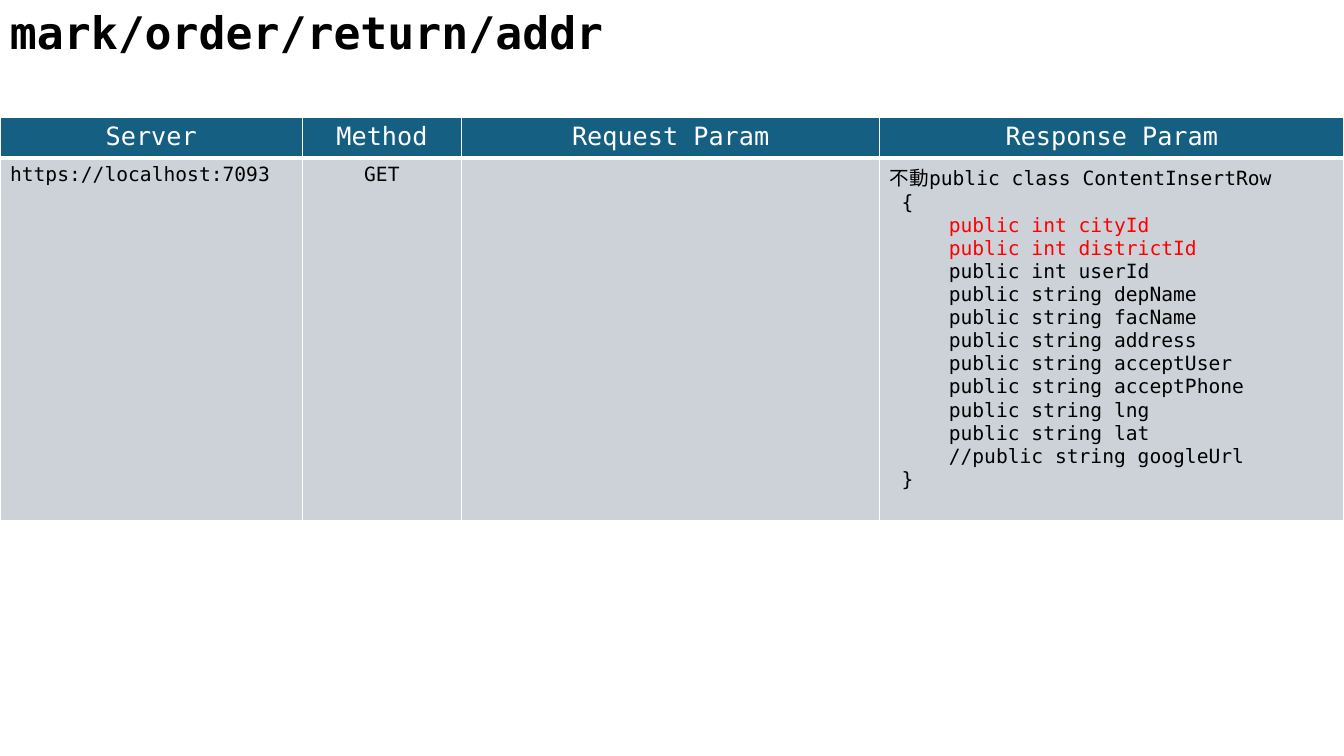
from dataclasses import dataclass

from lxml import etree
from pptx import Presentation
from pptx import util as u
from pptx.dml.color import RGBColor
from pptx.enum import text
from pptx.oxml.ns import qn


@dataclass(frozen=True)
class Theme:
    font: str = "DejaVu Sans Mono"
    ink: str = "000000"
    paper: str = "FFFFFF"
    header: str = "156082"
    body: str = "CCD2D8"
    changed: str = "FF0000"
    title_size: int = 32
    header_size: int = 18
    body_size: int = 14
    thin: int = 1
    thick: int = 3


THEME = Theme()
COLUMNS = {"Server": 7.62, "Method": 4.01, "Request Param": 10.54, "Response Param": 11.7}
CHANGED_FIELDS = ["int cityId", "int districtId"]
FIELDS = ["int userId", "string depName", "string facName", "string address",
          "string acceptUser", "string acceptPhone", "string lng", "string lat"]


def write(paragraph, words, *, size=THEME.body_size, color=THEME.ink, bold=False,
          align=text.PP_ALIGN.LEFT):
    paragraph.alignment = align
    run = paragraph.add_run()
    run.text = words
    run.font.name = THEME.font
    run.font.size = u.Pt(size)
    run.font.bold = bold
    run.font.color.rgb = RGBColor.from_string(color)


def style_cell(cell, fill, top, bottom):
    cell.fill.solid()
    cell.fill.fore_color.rgb = RGBColor.from_string(fill)
    # Cell borders come before the fill in the cell properties
    properties = cell._tc.get_or_add_tcPr()
    widths = {"a:lnL": THEME.thin, "a:lnR": THEME.thin, "a:lnT": top, "a:lnB": bottom}
    for index, (side, width) in enumerate(widths.items()):
        border = etree.Element(qn(side), w=str(u.Pt(width)))
        paint = etree.SubElement(border, qn("a:solidFill"))
        etree.SubElement(paint, qn("a:srgbClr"), val=THEME.paper)
        properties.insert(index, border)


def add_title(slide, left, top, width, height):
    frame = slide.shapes.add_textbox(left, top, width, height).text_frame
    frame.word_wrap = False
    write(frame.paragraphs[0], "mark/order/return/addr", size=THEME.title_size, bold=True)


def write_response(frame):
    indent = " " * 5
    lines = [("不動public class ContentInsertRow", THEME.ink), (" {", THEME.ink)]
    lines += [(f"{indent}public {field}", THEME.changed) for field in CHANGED_FIELDS]
    lines += [(f"{indent}public {field}", THEME.ink) for field in FIELDS]
    lines += [(f"{indent}//public string googleUrl", THEME.ink), (" }", THEME.ink)]
    for number, (line, color) in enumerate(lines):
        paragraph = frame.add_paragraph() if number else frame.paragraphs[0]
        write(paragraph, line, color=color)


def add_endpoint_table(slide, left, top, width, height):
    table = slide.shapes.add_table(2, len(COLUMNS), left, top, width, height).table
    table.first_row = table.horz_banding = False
    header_height = u.Cm(1.03)
    table.rows[0].height = header_height
    table.rows[1].height = height - header_height

    # Header row and column formats
    for index, (heading, column_width) in enumerate(COLUMNS.items()):
        table.columns[index].width = u.Cm(column_width)
        header, body = table.cell(0, index), table.cell(1, index)
        style_cell(header, THEME.header, THEME.thin, THEME.thick)
        style_cell(body, THEME.body, THEME.thick, THEME.thin)
        write(header.text_frame.paragraphs[0], heading, size=THEME.header_size,
              color=THEME.paper, align=text.PP_ALIGN.CENTER)

    # Endpoint details; the request has no parameters
    server, method, request, response = table.rows[1].cells
    write(server.text_frame.paragraphs[0], "https://localhost:7093")
    write(method.text_frame.paragraphs[0], "GET", align=text.PP_ALIGN.CENTER)
    request.text_frame.paragraphs[0].font.size = u.Pt(THEME.body_size)
    write_response(response.text_frame)


def main():
    deck = Presentation()
    deck.slide_width, deck.slide_height = u.Cm(33.87), u.Cm(19.05)
    slide = deck.slides.add_slide(deck.slide_layouts[6])
    add_endpoint_table(slide, u.Cm(0), u.Cm(2.95), deck.slide_width, u.Cm(10.18))
    add_title(slide, u.Cm(0), u.Cm(0), u.Cm(16.23), u.Cm(1.62))
    deck.save("out.pptx")


if __name__ == "__main__":
    main()
